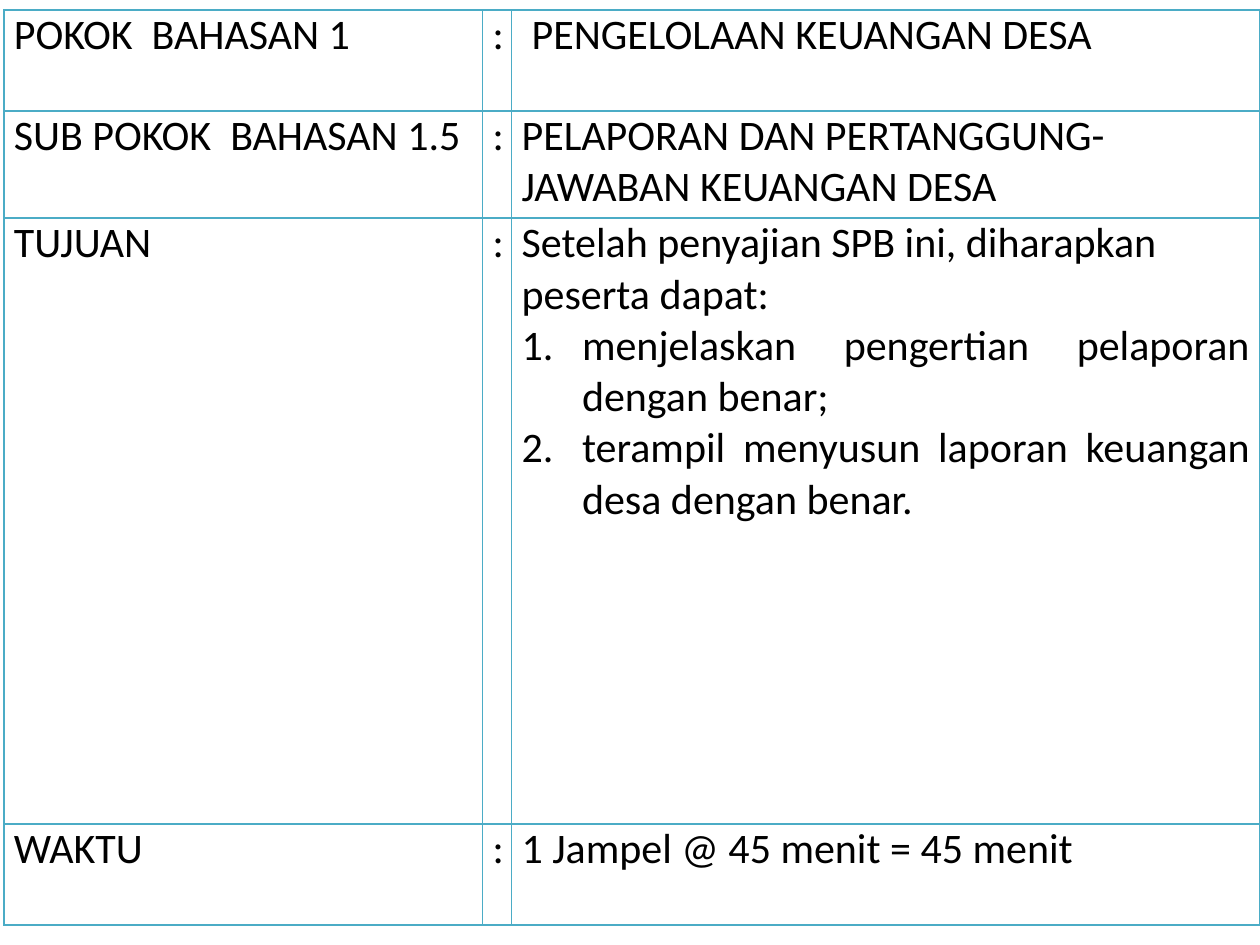
from dataclasses import dataclass

from lxml.etree import SubElement
from pptx import Presentation
from pptx.dml.color import RGBColor
from pptx.enum.text import PP_ALIGN
from pptx.oxml.ns import qn
from pptx.table import Table, _Cell
from pptx.util import Inches, Pt

SLIDE_WIDTH, SLIDE_HEIGHT = 10, 7.5
TABLE_LEFT, TABLE_TOP = 0.03, 0.08
COLUMN_WIDTHS = (3.8, 0.23, 5.94)
SIDE_MARGIN = 0.08
LIST_INDENT = 0.48
BORDER_WIDTH = 1
BLACK = RGBColor(0x00, 0x00, 0x00)
TEAL = RGBColor(0x4B, 0xAC, 0xC6)


@dataclass(frozen=True)
class Topic:
    label: str
    detail: str
    height: float
    goals: tuple[str, ...] = ()
    indent: float = 0


TOPICS = (
    Topic("POKOK  BAHASAN 1", "PENGELOLAAN KEUANGAN DESA", 0.8, indent=0.08),
    Topic("SUB POKOK  BAHASAN 1.5", "PELAPORAN DAN PERTANGGUNG-JAWABAN KEUANGAN DESA", 0.85),
    Topic(
        "TUJUAN",
        "Setelah penyajian SPB ini, diharapkan peserta dapat:",
        4.81,
        goals=(
            "menjelaskan pengertian pelaporan dengan benar;",
            "terampil menyusun laporan keuangan desa dengan benar.",
        ),
    ),
    Topic("WAKTU", "1 Jampel @ 45 menit = 45 menit", 0.8),
)


def add_borders(cell: _Cell) -> None:
    properties = cell._tc.get_or_add_tcPr()
    for side in ("a:lnL", "a:lnR", "a:lnT", "a:lnB"):
        border = SubElement(properties, qn(side), w=str(Pt(BORDER_WIDTH)))
        color = SubElement(border, qn("a:solidFill"))
        SubElement(color, qn("a:srgbClr"), val=str(TEAL))


def write_cell(
    cell: _Cell, text: str, goals: tuple[str, ...] = (), indent: float = 0
) -> None:
    cell.margin_left = cell.margin_right = Inches(SIDE_MARGIN)
    cell.margin_top = cell.margin_bottom = 0
    add_borders(cell)
    cell.fill.background()
    cell.text = "\n".join((text, *goals))
    for position, paragraph in enumerate(cell.text_frame.paragraphs):
        paragraph.font.name = "Calibri"
        paragraph.font.size = Pt(24)
        paragraph.font.color.rgb = BLACK
        properties = paragraph._p.get_or_add_pPr()
        if position:
            paragraph.alignment = PP_ALIGN.JUSTIFY
            properties.set("marL", str(Inches(LIST_INDENT)))
            properties.set("indent", str(-Inches(LIST_INDENT)))
            numbering = SubElement(properties, qn("a:buAutoNum"), type="arabicPeriod")
            properties.insert(0, numbering)
        elif indent:
            properties.set("marL", str(Inches(indent)))


def fill_table(table: Table) -> None:
    table.first_row = table.horz_banding = False
    for column, width in zip(table.columns, COLUMN_WIDTHS):
        column.width = Inches(width)
    for row, topic in zip(table.rows, TOPICS):
        row.height = Inches(topic.height)
        label, colon, detail = row.cells
        write_cell(label, topic.label)
        write_cell(colon, ":")
        write_cell(detail, topic.detail, topic.goals, topic.indent)


def main() -> None:
    presentation = Presentation()
    presentation.slide_width = Inches(SLIDE_WIDTH)
    presentation.slide_height = Inches(SLIDE_HEIGHT)
    slide = presentation.slides.add_slide(presentation.slide_layouts[6])
    frame = slide.shapes.add_table(
        len(TOPICS),
        len(COLUMN_WIDTHS),
        Inches(TABLE_LEFT),
        Inches(TABLE_TOP),
        Inches(sum(COLUMN_WIDTHS)),
        Inches(sum(topic.height for topic in TOPICS)),
    )
    fill_table(frame.table)
    presentation.save("out.pptx")


if __name__ == "__main__":
    main()
